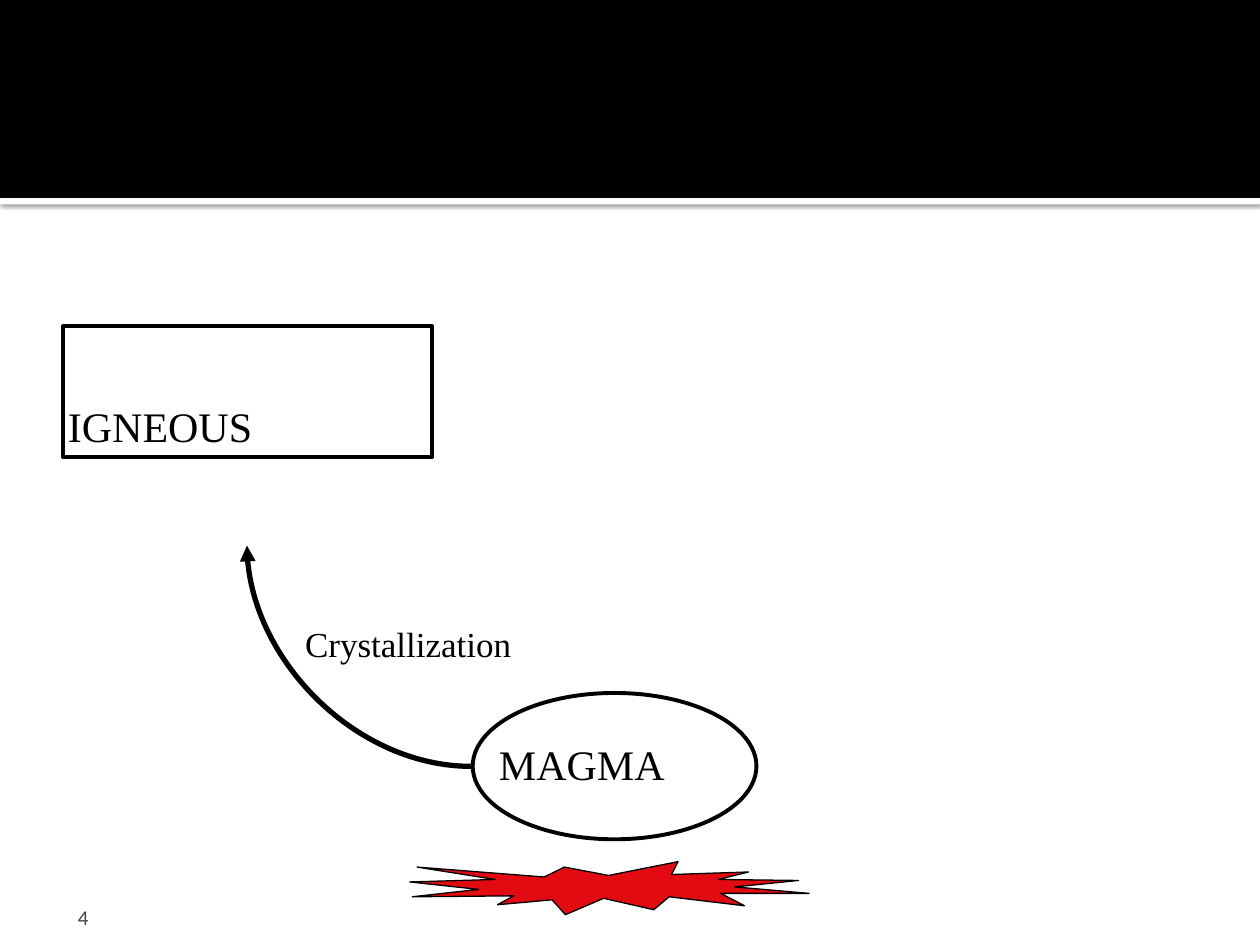
from lxml import etree
from pptx import Presentation
from pptx.dml.color import RGBColor
from pptx.enum.shapes import MSO_SHAPE
from pptx.enum.text import MSO_ANCHOR, PP_ALIGN
from pptx.oxml import parse_xml
from pptx.oxml.ns import nsdecls, qn
from pptx.util import Cm, Pt

RECT, OVAL = MSO_SHAPE.RECTANGLE, MSO_SHAPE.OVAL
TOP, BOTTOM = MSO_ANCHOR.TOP, MSO_ANCHOR.BOTTOM
SERIF, SANS = "Times New Roman", "Calibri"
BLACK, WHITE, RED, GREY = "000000", "FFFFFF", "E30B12", "454545"

# Lengths in cm; boxes are left, top, width, height
RULE = (0, 3.99, 25.4, 0.13)
BAND = (0, 0, 25.4, 3.99)
IGNEOUS = (1.27, 6.58, 7.44, 2.64)
MAGMA = (9.53, 13.97, 5.72, 2.95)
LABELS = [  # text, box, font, size, colour, anchor, left inset
    ("4", (1.27, 17.98, 5.92, 0.76), SANS, 12, GREY, BOTTOM, 0.3),
    ("MAGMA", (9.96, 14.89, 4.7, 1.12), SERIF, 24, BLACK, TOP, 0.1),
    ("Crystallization", (6.05, 12.55, 4.45, 0.86), SERIF, 20, BLACK, TOP, 0.1),
]
# Start, two control points, end
ARROW = [(9.5, 15.45), (7.24, 15.45), (4.98, 13.23), (4.98, 11)]
HEAT = [
    (12.27, 17.65), (11.38, 17.48), (10.97, 17.68), (8.41, 17.48),
    (9.98, 17.73), (8.26, 17.78), (9.65, 17.93), (8.31, 18.08),
    (10.36, 18.06), (10.03, 18.24), (11.13, 18.14), (11.4, 18.44),
    (12.17, 18.11), (13.18, 18.34), (13.49, 18.08), (15.01, 18.26),
    (14.53, 18.01), (16.31, 18.01), (14.81, 17.88), (16.1, 17.75),
    (14.48, 17.73), (15.09, 17.58), (13.54, 17.63), (13.67, 17.37),
]


def rgb(color):
    return RGBColor.from_string(color)


def style(sp, fill=None, line=None, width=0):
    sp.shadow.inherit = False
    if fill:
        sp.fill.solid()
        sp.fill.fore_color.rgb = rgb(fill)
    else:
        sp.fill.background()
    if line:
        sp.line.color.rgb = rgb(line)
        sp.line.width = Pt(width)
    else:
        sp.line.fill.background()
    return sp


def add_block(s, kind, box, *look):
    return style(s.shapes.add_shape(kind, *map(Cm, box)), *look)


def write(sp, text, font, size, color, anchor, left, bottom=0):
    tf = sp.text_frame
    tf.word_wrap = True
    tf.vertical_anchor = anchor
    tf.margin_left, tf.margin_right = Cm(left), Cm(0.1)
    tf.margin_top, tf.margin_bottom = 0, Cm(bottom)
    p = tf.paragraphs[0]
    p.text = text
    p.alignment = PP_ALIGN.LEFT
    p.font.name, p.font.size = font, Pt(size)
    p.font.color.rgb = rgb(color)


def add_outline(s, points, close):
    start, *rest = [(Cm(x), Cm(y)) for x, y in points]
    builder = s.shapes.build_freeform(*start)
    builder.add_line_segments(rest, close=close)
    return builder.convert_to_shape()


def bend(sp):
    """Turn three straight segments into one cubic curve."""
    outline = next(sp._element.iter(qn("a:path")))
    curve = etree.SubElement(outline, qn("a:cubicBezTo"))
    for segment in outline.findall(qn("a:lnTo")):
        curve.append(segment[0])
        outline.remove(segment)


def add_shadow(sp):
    effects = sp._element.spPr.find(qn("a:effectLst"))
    effects.append(parse_xml(
        f'<a:outerShdw {nsdecls("a")} blurRad="{Pt(2.5)}" dist="{Pt(0.8)}" '
        'dir="5400000" rotWithShape="0"><a:srgbClr val="000000">'
        '<a:alpha val="60000"/></a:srgbClr></a:outerShdw>'))


def main():
    prs = Presentation()
    prs.slide_width, prs.slide_height = Cm(25.4), Cm(19.05)
    s = prs.slides.add_slide(prs.slide_layouts[6])

    add_shadow(add_block(s, RECT, RULE, WHITE))
    add_block(s, RECT, BAND, BLACK)
    add_block(s, OVAL, MAGMA, WHITE, BLACK, 2.25)

    arrow = style(add_outline(s, ARROW, False), None, BLACK, 3)
    bend(arrow)
    etree.SubElement(arrow.line._get_or_add_ln(), qn("a:tailEnd"), type="triangle")
    style(add_outline(s, HEAT, True), RED, BLACK, 0.75)

    for text, box, *look in LABELS:
        write(s.shapes.add_textbox(*map(Cm, box)), text, *look)
    igneous = add_block(s, RECT, IGNEOUS, None, BLACK, 2.25)
    write(igneous, "IGNEOUS", SERIF, 24, BLACK, BOTTOM, 0.1, 0.13)

    prs.save("out.pptx")


if __name__ == "__main__":
    main()
